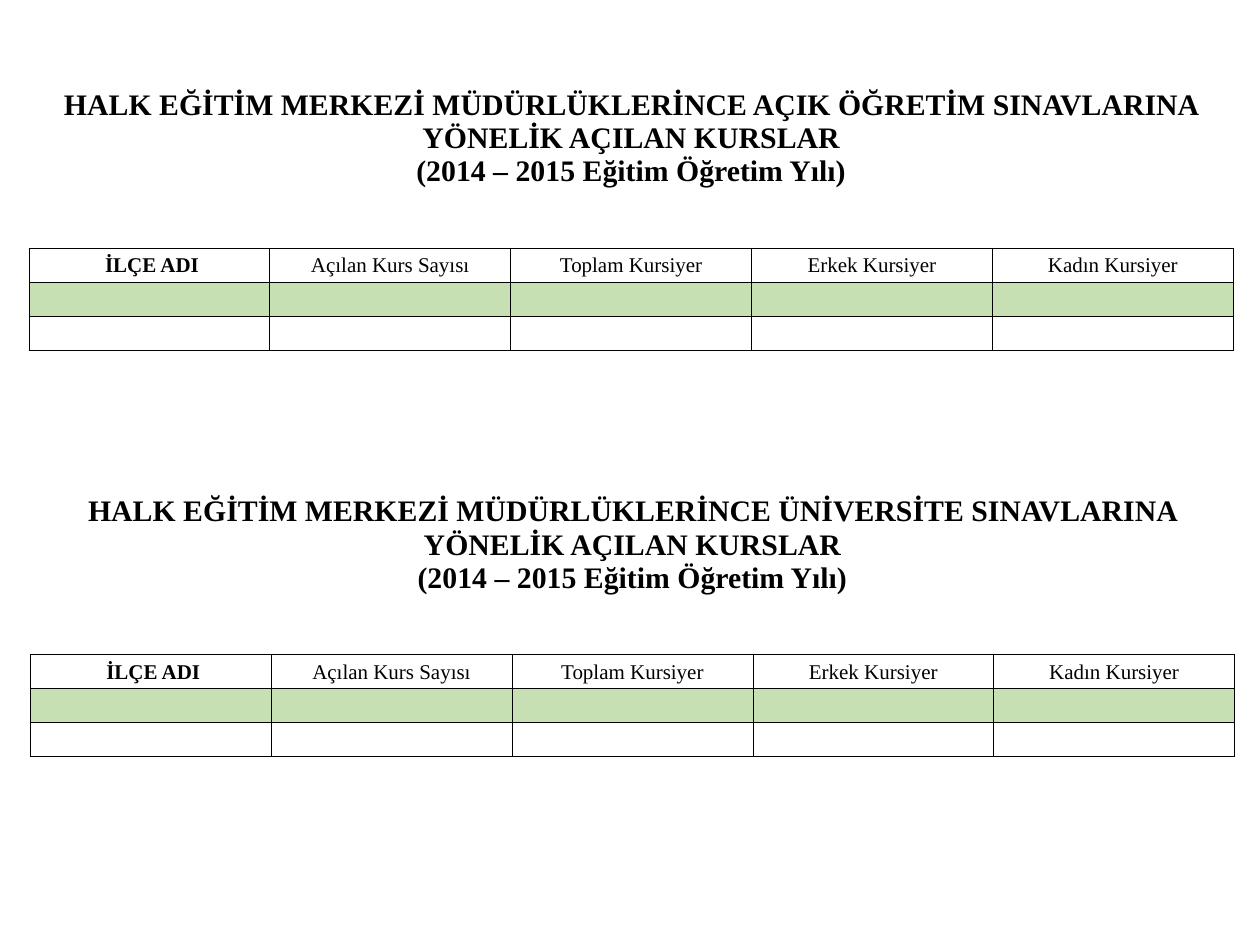
from lxml import etree
from pptx import Presentation, util as u
from pptx.dml.color import RGBColor
from pptx.enum import text
from pptx.oxml.ns import qn

COLORS = {"ink": "000000", "paper": "FFFFFF", "band": "C6E0B4"}
FONT = "Times New Roman"
TITLE = "HALK EĞİTİM MERKEZİ MÜDÜRLÜKLERİNCE {} SINAVLARINA YÖNELİK AÇILAN KURSLAR"
YEAR = "(2014 – 2015 Eğitim Öğretim Yılı)"
HEADERS = [" İLÇE ADI", "Açılan Kurs Sayısı", "Toplam Kursiyer", "Erkek Kursiyer", "Kadın Kursiyer"]
ROWS = [1.23, 0.26, 0.27, 0.27, 0.27]
EXAMS = [("AÇIK ÖĞRETİM", 0.023, 0.064), ("ÜNİVERSİTE", 0.024, 0.494)]


class CourseSlide:
    """Holds the slide, its size and the style of the course tables."""

    def __init__(self, prs):
        self.s = prs.slides.add_slide(prs.slide_layouts[6])
        self.width, self.height = prs.slide_width, prs.slide_height

    def borders(self, cell, sides):
        tc_pr = cell._tc.get_or_add_tcPr()
        for side in "LRTB":
            ln = etree.SubElement(tc_pr, qn(f"a:ln{side}"), w=str(u.Pt(0.5)))
            if side in sides:
                fill = etree.SubElement(ln, qn("a:solidFill"))
                etree.SubElement(fill, qn("a:srgbClr"), val=COLORS["ink"])
            else:
                etree.SubElement(ln, qn("a:noFill"))

    def lines(self, cell, lines, size, bold):
        tf = cell.text_frame
        for i, line in enumerate(lines):
            p = tf.add_paragraph() if i else tf.paragraphs[0]
            p.alignment = text.PP_ALIGN.CENTER
            r = p.add_run()
            r.text = line
            for name, value in {"name": FONT, "size": u.Pt(size), "bold": bold}.items():
                setattr(r.font, name, value)
            r.font.color.rgb = RGBColor.from_string(COLORS["ink"])

    def style(self, cell, sides, color):
        layout = {"margin_left": u.Inches(0.01), "margin_right": u.Inches(0.01),
                  "margin_top": u.Inches(0.01), "margin_bottom": 0,
                  "vertical_anchor": text.MSO_ANCHOR.MIDDLE}
        for name, value in layout.items():
            setattr(cell, name, value)
        self.borders(cell, sides)
        if color:
            cell.fill.solid()
            cell.fill.fore_color.rgb = RGBColor.from_string(COLORS[color])
        else:
            cell.fill.background()
        p = cell.text_frame.paragraphs[0]
        etree.SubElement(p._p, qn("a:endParaRPr"), sz="1200")

    def table(self, exam, left, top):
        frame = self.s.shapes.add_table(
            len(ROWS), len(HEADERS), int(left * self.width), int(top * self.height),
            int(0.956 * self.width), u.Inches(sum(ROWS)))
        tbl = frame.table
        for flag in ("first_row", "horz_banding"):
            setattr(tbl, flag, False)
        for row, height in zip(tbl.rows, ROWS):
            row.height = u.Inches(height)
        row_styles = [("", None), ("B", None), ("LRTB", None), ("LRTB", "band"), ("LRTB", "paper")]
        for row, (sides, color) in zip(tbl.rows, row_styles):
            for cell in row.cells:
                self.style(cell, sides, color)
        title = tbl.cell(0, 0)
        title.merge(tbl.cell(0, len(HEADERS) - 1))
        self.lines(title, [TITLE.format(exam), YEAR], 17, True)
        for col, header in enumerate(HEADERS):
            self.lines(tbl.cell(2, col), [header], 12, col == 0)


def main():
    prs = Presentation()
    prs.slide_width, prs.slide_height = u.Inches(10), u.Inches(7.5)
    slide = CourseSlide(prs)
    for exam in EXAMS:
        slide.table(*exam)
    prs.save("out.pptx")


if __name__ == "__main__":
    main()
